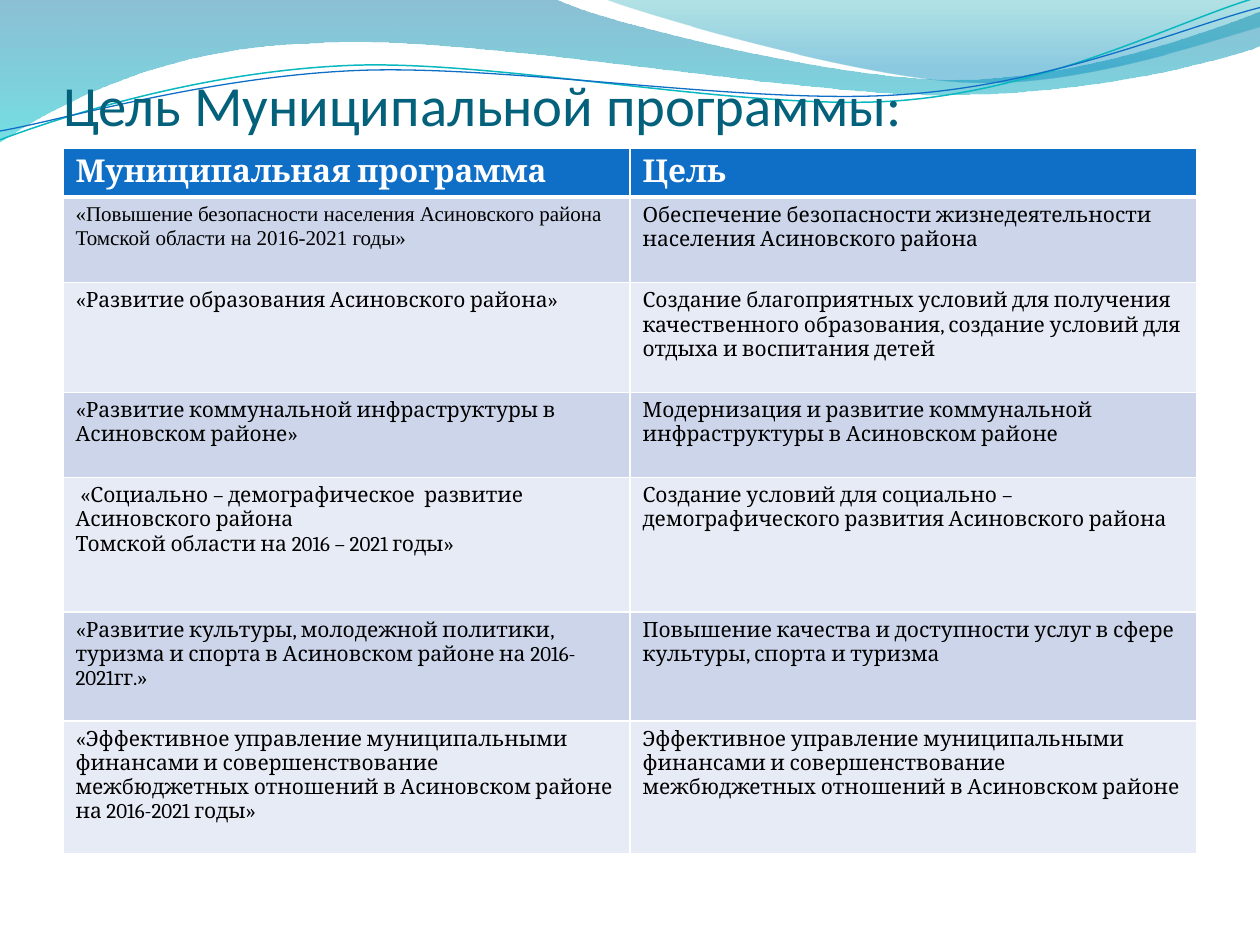
from lxml.etree import SubElement
from pptx import Presentation
from pptx.dml.color import RGBColor
from pptx.enum.text import MSO_ANCHOR, PP_ALIGN
from pptx.oxml.ns import qn
from pptx.util import Cm, Pt

WHITE = RGBColor(0xFF, 0xFF, 0xFF)
BLACK = RGBColor(0, 0, 0)
TITLE_TEAL = RGBColor(0x04, 0x61, 0x7B)
BLUE = RGBColor(0x0F, 0x6F, 0xC6)
TURQUOISE = RGBColor(0x0A, 0xB8, 0xBF)
BAND_DARK = RGBColor(0xCC, 0xD5, 0xEA)
BAND_LIGHT = RGBColor(0xE7, 0xEB, 0xF5)
DEEP_BLUE = RGBColor(0x00, 0x74, 0xA1)
CYAN = RGBColor(0x00, 0xC6, 0xCF)
SEA_GREEN = RGBColor(0x00, 0xA1, 0xA9)
SKY_BLUE = RGBColor(0x00, 0x8B, 0xBF)

INCH = 2.54
MARGIN = 1.27
TABLE_WIDTH = 22.86
ROW_HEIGHTS = [0.97, 1.73, 2.21, 1.72, 2.71, 2.2, 2.68]

LEFT_WAVE = [
    [(0, 0)], [(4.4, -0.01)],
    [(4.76, 0.17), (6.64, 0.63), (7.58, 0.63)],
    [(8.53, 0.63), (9.58, 0.26), (10, 0.09)],
    [(10.01, 0.36)],
    [(9.83, 0.44), (8.7, 0.76), (7.46, 0.75)],
    [(6.22, 0.75), (3.82, 0.28), (2.57, 0.34)],
    [(1.29, 0.36), (0.46, 0.83), (-0.01, 1.13)],
]
RIGHT_WAVE = [
    [(4.79, -0.01)],
    [(5.09, 0.11), (6.82, 0.62), (7.69, 0.65)],
    [(8.56, 0.69), (9.61, 0.32), (10, 0.21)],
    [(10, 0)],
]
TURQUOISE_LINE = [
    [(0, 1.11)],
    [(0.48, 0.93), (1.58, 0.57), (2.77, 0.52)],
    [(3.95, 0.47), (5.93, 0.89), (7.13, 0.8)],
    [(8.33, 0.71), (9.38, 0.15), (9.98, -0.02)],
]
BLUE_LINE = [
    [(0, 1.04)],
    [(0.47, 0.96), (1.64, 0.61), (2.83, 0.56)],
    [(4.03, 0.51), (5.97, 0.84), (7.17, 0.75)],
    [(8.36, 0.67), (9.41, 0.21), (10, 0.06)],
]
PROGRAMMES = [
    ("Муниципальная программа", "Цель"),
    ("«Повышение безопасности населения Асиновского района Томской области на 2016-2021 годы»",
     "Обеспечение безопасности жизнедеятельности населения Асиновского района"),
    ("«Развитие образования Асиновского района»",
     "Создание благоприятных условий для получения качественного образования, "
     "создание условий для отдыха и воспитания детей"),
    ("«Развитие коммунальной инфраструктуры в Асиновском районе»",
     "Модернизация и развитие коммунальной инфраструктуры в Асиновском районе"),
    (" «Социально – демографическое  развитие Асиновского района\n"
     "Томской области на 2016 – 2021 годы»",
     "Создание условий для социально – демографического развития Асиновского района"),
    ("«Развитие культуры, молодежной политики, туризма и спорта в Асиновском районе на 2016-2021гг.»",
     "Повышение качества и доступности услуг в сфере культуры, спорта и туризма"),
    ("«Эффективное управление муниципальными финансами и совершенствование "
     "межбюджетных отношений в Асиновском районе на 2016-2021 годы»",
     "Эффективное управление муниципальными финансами и совершенствование "
     "межбюджетных отношений в Асиновском районе"),
]


def to_lengths(point):
    return tuple(Cm(value * INCH) for value in point)


def bend(shape, segments):
    edges = list(shape.element.iter(qn("a:lnTo")))
    for edge, segment in zip(edges, segments[1:]):
        if len(segment) == 1:
            continue
        edge.tag = qn("a:cubicBezTo")
        for corner in edge.findall(qn("a:pt")):
            edge.remove(corner)
        for x, y in map(to_lengths, segment):
            SubElement(edge, qn("a:pt"), x=str(x - shape.left), y=str(y - shape.top))


def add_outline(page, segments, close):
    start, *rest = [to_lengths(segment[-1]) for segment in segments]
    builder = page.shapes.build_freeform(*start)
    builder.add_line_segments(rest, close=close)
    shape = builder.convert_to_shape()
    shape.shadow.inherit = False
    bend(shape, segments)
    return shape


def add_wave(page, segments, stops):
    shape = add_outline(page, segments, True)
    shape.line.fill.background()
    shape.fill.gradient()
    shape.fill.gradient_angle = 270
    for stop, (position, color, _) in zip(shape.fill.gradient_stops, stops):
        stop.position = position
        stop.color.rgb = color
    for node, (_, _, opacity) in zip(shape.element.iter(qn("a:srgbClr")), stops):
        SubElement(node, qn("a:alpha"), val=str(opacity * 1000))


def add_wave_line(page, segments, color, width):
    shape = add_outline(page, segments, False)
    shape.fill.background()
    shape.line.color.rgb = color
    shape.line.width = Pt(width)


def write(frame, text, *, font, size, color, bold=False):
    frame.text = text
    for para in frame.paragraphs:
        para.alignment = PP_ALIGN.LEFT
        for span in para.runs:
            span.font.name = font
            span.font.size = Pt(size)
            span.font.bold = bold
            span.font.color.rgb = color


def set_title(page, text):
    title = page.shapes.title
    title.left, title.top = Cm(MARGIN), Cm(1.19)
    title.width, title.height = Cm(TABLE_WIDTH), Cm(1.6)
    frame = title.text_frame
    frame.margin_left = frame.margin_right = frame.margin_bottom = 0
    frame.vertical_anchor = MSO_ANCHOR.BOTTOM
    write(frame, text, font="Calibri", size=32.4, color=TITLE_TEAL)
    title.element.getparent().append(title.element)


def set_borders(cell, **widths):
    properties = cell._tc.get_or_add_tcPr()
    for position, (side, width) in enumerate(widths.items()):
        line = SubElement(properties, qn(f"a:ln{side}"), w=str(Pt(width)))
        fill = SubElement(line, qn("a:solidFill"))
        SubElement(fill, qn("a:srgbClr"), val=str(WHITE))
        properties.insert(position, line)


def add_programme_table(page):
    table = page.shapes.add_table(len(PROGRAMMES), 2, Cm(MARGIN), Cm(2.98),
                                  Cm(TABLE_WIDTH), Cm(sum(ROW_HEIGHTS))).table
    for row, height in zip(table.rows, ROW_HEIGHTS):
        row.height = Cm(height)
    for i, texts in enumerate(PROGRAMMES):
        for j, text in enumerate(texts):
            cell = table.cell(i, j)
            cell.fill.solid()
            if i == 0:
                cell.fill.fore_color.rgb = BLUE
                write(cell.text_frame, text, font="Cambria", size=18, color=WHITE, bold=True)
            else:
                cell.fill.fore_color.rgb = BAND_DARK if i % 2 else BAND_LIGHT
                font = "Times New Roman" if (i, j) == (1, 0) else "Cambria"
                write(cell.text_frame, text, font=font, size=12, color=BLACK)
            set_borders(cell, L=1, R=1, T=3 if i == 1 else 1, B=3 if i == 0 else 1)


def main():
    deck = Presentation()
    deck.slide_width, deck.slide_height = Cm(25.4), Cm(19.05)
    page = deck.slides.add_slide(deck.slide_layouts[5])
    add_wave(page, LEFT_WAVE, [(0, DEEP_BLUE, 45), (1, CYAN, 55)])
    add_wave(page, RIGHT_WAVE, [(0, SEA_GREEN, 30), (0.8, SKY_BLUE, 45)])
    add_wave_line(page, TURQUOISE_LINE, TURQUOISE, 0.85)
    add_wave_line(page, BLUE_LINE, BLUE, 0.75)
    set_title(page, "Цель Муниципальной программы:")
    add_programme_table(page)
    deck.save("out.pptx")


if __name__ == "__main__":
    main()
